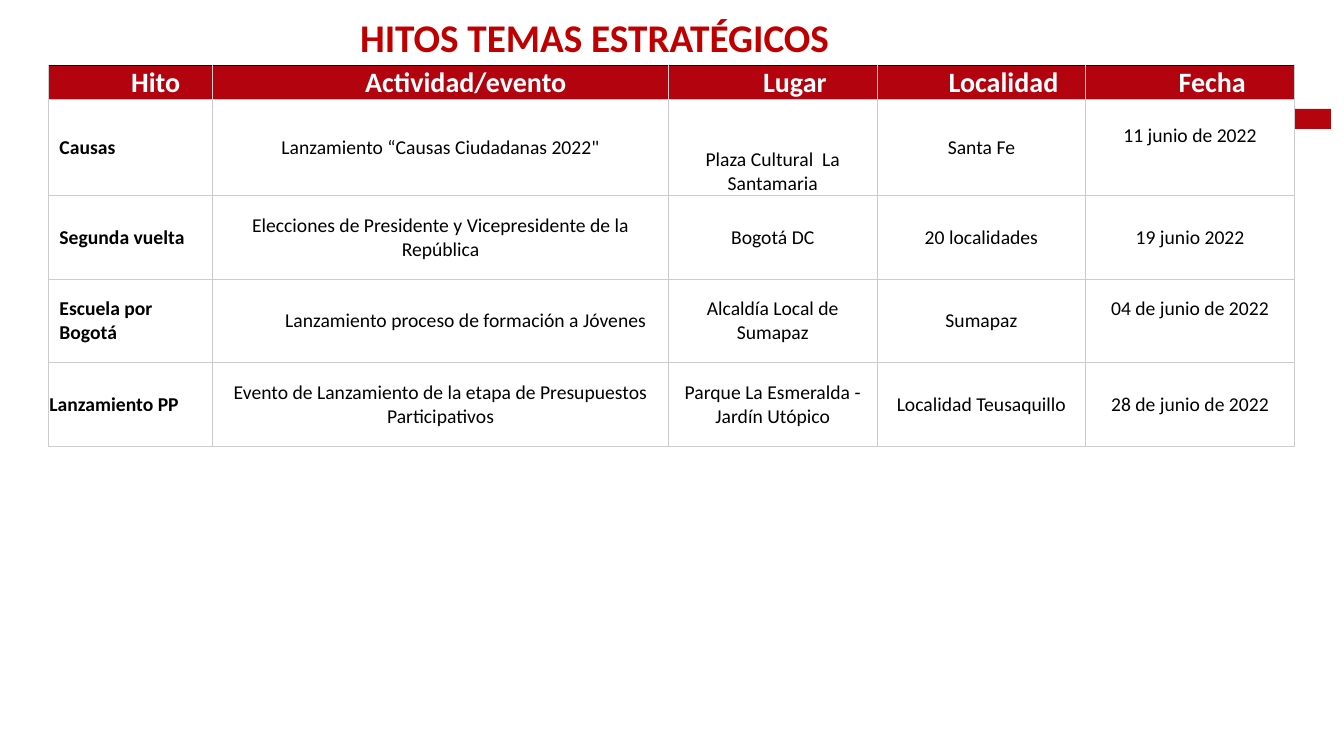
from lxml import etree
from pptx import Presentation
from pptx import util as u
from pptx.dml.color import RGBColor
from pptx.enum import shapes, text
from pptx.oxml import ns

WIDTH, HEIGHT = u.Inches(13.33), u.Inches(7.5)
FONT = "Calibri"
WHITE = RGBColor(0xFF, 0xFF, 0xFF)
BLACK = RGBColor(0, 0, 0)
GREY = RGBColor(0xCC, 0xCC, 0xCC)
TITLE_RED = RGBColor(0xC0, 0, 0)
HEADER_RED = RGBColor(0xB3, 0x03, 0x0F)
BAR_RED = RGBColor(0xB4, 0x04, 0x0E)

COLUMNS = [1.63, 4.52] + [2.07] * 3
ROWS = [0.34, 0.95] + [0.83] * 3
HEADERS = ["Hito", "Actividad/evento", "Lugar ", "Localidad ", "Fecha "]
MILESTONES = [
    ["Causas ", "Lanzamiento “Causas Ciudadanas 2022\"",
     "Plaza Cultural  La Santamaria", "Santa Fe", "11 junio de 2022"],
    ["Segunda vuelta ", "Elecciones de Presidente y Vicepresidente de la República",
     "Bogotá DC", "20 localidades", "19 junio 2022"],
    ["Escuela por Bogotá", "Lanzamiento proceso de formación a Jóvenes",
     "Alcaldía Local de Sumapaz", "Sumapaz", "04 de junio de 2022"],
    ["Lanzamiento PP", "Evento de Lanzamiento de la etapa de Presupuestos Participativos",
     "Parque La Esmeralda - Jardín Utópico", "Localidad Teusaquillo", "28 de junio de 2022"],
]
INDENTS = {(1, 0): 0.1, (2, 0): 0.1, (3, 0): 0.1, (3, 1): 0.5}
RAISED = {(1, 4), (3, 4)}
LOW = {(1, 2)}


def write(frame, words, size=14, color=BLACK, bold=False,
          align=text.PP_ALIGN.CENTER, indent=0):
    para = frame.paragraphs[0]
    para.alignment = align
    properties = para._p.get_or_add_pPr()
    properties.set("marL", str(u.Inches(indent)))
    properties.set("indent", "0")
    span = para.add_run()
    span.text = words
    span.font.name = FONT
    span.font.size = u.Pt(size)
    span.font.bold = bold
    span.font.color.rgb = color


def add_title(page, words, left, top, width, height):
    box = page.shapes.title
    box.left, box.top, box.width, box.height = map(u.Inches, (left, top, width, height))
    frame = box.text_frame
    frame.word_wrap = True
    frame.auto_size = text.MSO_AUTO_SIZE.NONE
    frame.vertical_anchor = text.MSO_ANCHOR.TOP
    write(frame, words, size=28, color=TITLE_RED, bold=True)


def add_bar(page, left, top, width, height):
    bar = page.shapes.add_shape(shapes.MSO_SHAPE.RECTANGLE,
                                *map(u.Inches, (left, top, width, height)))
    bar.shadow.inherit = False
    bar.fill.solid()
    bar.fill.fore_color.rgb = BAR_RED
    bar.line.fill.background()


def set_borders(cell, top):
    properties = cell._tc.get_or_add_tcPr()
    for side, color in (("L", GREY), ("R", GREY), ("T", top), ("B", GREY)):
        line = etree.SubElement(properties, ns.qn("a:ln" + side), w=str(u.Pt(0.75)))
        fill = etree.SubElement(line, ns.qn("a:solidFill"))
        etree.SubElement(fill, ns.qn("a:srgbClr"), val=str(color))


def fill_cell(cell, words, row, column):
    header = row == 0
    set_borders(cell, BLACK if header else GREY)
    cell.fill.solid()
    cell.fill.fore_color.rgb = HEADER_RED if header else WHITE
    cell.margin_left = cell.margin_right = u.Inches(0.01)
    cell.margin_top = 0
    cell.margin_bottom = u.Inches(0.24 if (row, column) in RAISED else 0)
    low = (row, column) in LOW
    cell.vertical_anchor = text.MSO_ANCHOR.BOTTOM if low else text.MSO_ANCHOR.MIDDLE
    if header:
        write(cell.text_frame, words, size=20, color=WHITE, bold=True, indent=0.5)
    else:
        first = column == 0
        write(cell.text_frame, words, bold=first,
              align=text.PP_ALIGN.LEFT if first else text.PP_ALIGN.CENTER,
              indent=INDENTS.get((row, column), 0))


def add_schedule(page, left, top):
    table = page.shapes.add_table(
        len(ROWS), len(COLUMNS),
        *map(u.Inches, (left, top, sum(COLUMNS), sum(ROWS)))).table
    for column, width in zip(table.columns, COLUMNS):
        column.width = u.Inches(width)
    for row, height in zip(table.rows, ROWS):
        row.height = u.Inches(height)
    for row, entries in enumerate([HEADERS] + MILESTONES):
        for column, words in enumerate(entries):
            fill_cell(table.cell(row, column), words, row, column)


def main():
    deck = Presentation()
    deck.slide_width, deck.slide_height = WIDTH, HEIGHT
    page = deck.slides.add_slide(deck.slide_layouts[5])
    add_bar(page, 12.23, 1.08, 0.97, 0.2)
    add_schedule(page, 0.48, 0.65)
    add_title(page, "HITOS TEMAS ESTRATÉGICOS ", 0.71, 0.08, 10.46, 0.57)
    deck.save("out.pptx")


if __name__ == "__main__":
    main()
